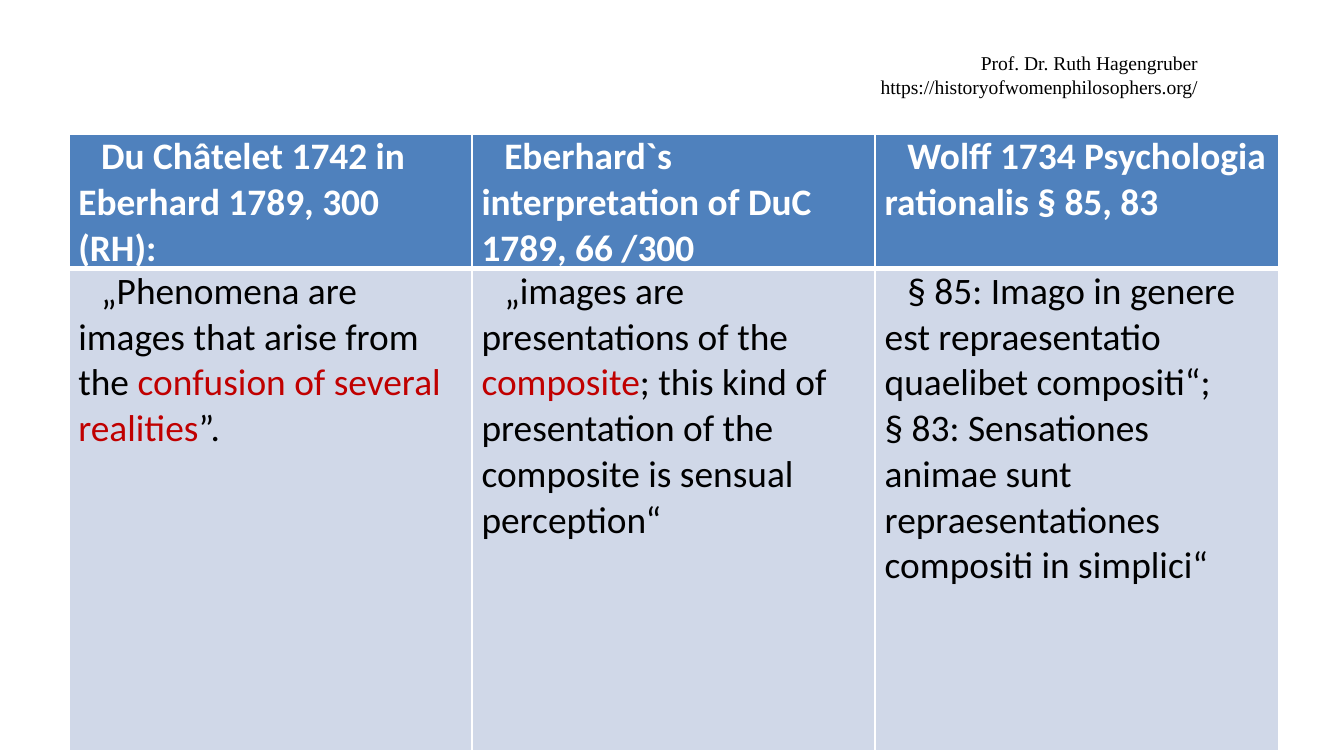
"""Build a slide comparing three accounts of images and phenomena."""
from lxml import etree
from pptx import Presentation
from pptx.dml.color import RGBColor
from pptx.enum.text import PP_ALIGN
from pptx.oxml.ns import qn
from pptx.util import Cm, Pt

RIGHT = PP_ALIGN.RIGHT
INK = {"head": "4F81BD", "body": "D0D8E8", "white": "FFFFFF", "black": "000000", "red": "C00000"}

CREDIT = "Prof. Dr. Ruth Hagengruber https://historyofwomenphilosophers.org/"
HEADS = [
    "Du Châtelet 1742 in Eberhard 1789, 300 (RH):",
    "Eberhard`s interpretation of DuC\v1789, 66 /300",
    "Wolff 1734 Psychologia rationalis § 85, 83",
]
QUOTES = [
    [
        ("„Phenomena are images that arise from the ", "black"),
        ("confusion of several realities", "red"),
        ("”.", "black"),
    ],
    [
        ("„images are presentations of the ", "black"),
        ("composite", "red"),
        ("; this kind of presentation of the composite is sensual perception“", "black"),
    ],
    [
        ("§ 85: Imago in genere est repraesentatio quaelibet compositi“; \v"
         "§ 83: Sensationes animae sunt repraesentationes compositi in simplici“", "black"),
    ],
]
ROWS = [
    {"cells": [[(head, "white")] for head in HEADS], "fill": "head", "bold": True,
     "high": 2.29, "lines": {"L": 1, "R": 1, "T": 1, "B": 3}},
    {"cells": QUOTES, "fill": "body", "bold": False,
     "high": 9.12, "lines": {"L": 1, "R": 1, "T": 3, "B": 1}},
]
WIDE = 7.62


def style(font, name, size, color, bold=False):
    font.name, font.size, font.bold = name, Pt(size), bold
    font.color.rgb = RGBColor.from_string(INK[color])


def add_run(para, text, color, bold):
    for i, part in enumerate(text.split("\v")):
        if i:
            para.add_line_break()
        run = para.add_run()
        run.text = part
        style(run.font, "Calibri", 20, color, bold)


def edge(cell, lines):
    props = cell._tc.get_or_add_tcPr()
    for side, width in lines.items():
        line = etree.SubElement(props, qn(f"a:ln{side}"), w=str(Pt(width)))
        fill = etree.SubElement(line, qn("a:solidFill"))
        etree.SubElement(fill, qn("a:srgbClr"), val=INK["white"])


def fill_cell(cell, runs, row):
    cell.margin_left = cell.margin_right = Cm(0.18)
    cell.margin_top = cell.margin_bottom = 0
    edge(cell, row["lines"])
    cell.fill.solid()
    cell.fill.fore_color.rgb = RGBColor.from_string(INK[row["fill"]])
    para = cell.text_frame.paragraphs[0]
    para._p.get_or_add_pPr().set("indent", str(Cm(0.43)))
    for text, color in runs:
        add_run(para, text, color, row["bold"])


def add_credit(slide):
    frame = slide.shapes.add_textbox(Cm(15.09), Cm(0.84), Cm(7.8), Cm(1.14)).text_frame
    frame.word_wrap = True
    frame.text = CREDIT
    para = frame.paragraphs[0]
    para.alignment = RIGHT
    style(para.runs[0].font, "Times New Roman", 10.5, "black")


def add_grid(slide):
    count = len(HEADS)
    high = sum(row["high"] for row in ROWS)
    table = slide.shapes.add_table(
        len(ROWS), count, Cm(1.3), Cm(2.54), Cm(WIDE * count), Cm(high)).table
    for col in table.columns:
        col.width = Cm(WIDE)
    for r, row in enumerate(ROWS):
        table.rows[r].height = Cm(row["high"])
        for c, runs in enumerate(row["cells"]):
            fill_cell(table.cell(r, c), runs, row)


def main():
    deck = Presentation()
    deck.slide_width, deck.slide_height = Cm(25.4), Cm(14.29)
    slide = deck.slides.add_slide(deck.slide_layouts[6])
    add_credit(slide)
    add_grid(slide)
    deck.save("out.pptx")


if __name__ == "__main__":
    main()
